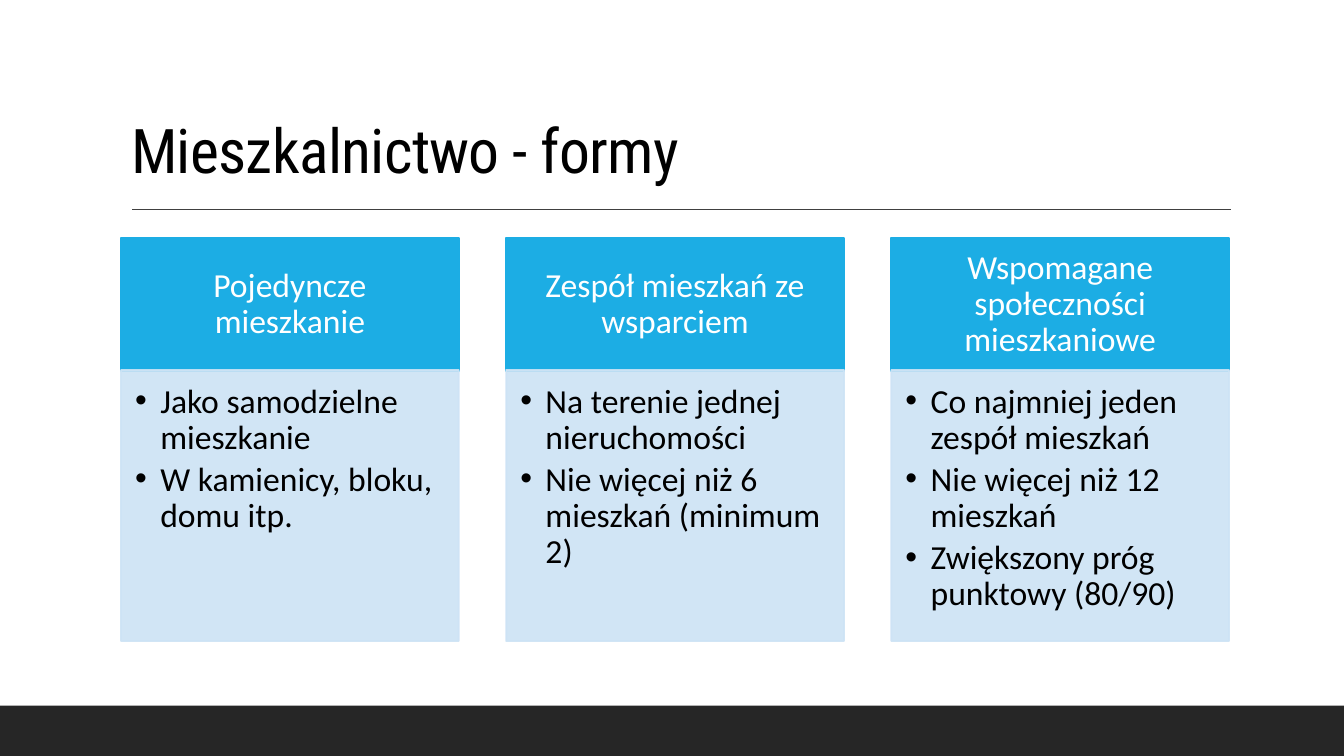
from lxml.etree import SubElement
from pptx import Presentation
from pptx.dml.color import RGBColor
from pptx.enum.shapes import MSO_CONNECTOR, MSO_SHAPE
from pptx.enum.text import MSO_ANCHOR, MSO_AUTO_SIZE, PP_ALIGN
from pptx.oxml.ns import qn
from pptx.util import Inches, Pt

TITLE = "Mieszkalnictwo - formy"
FORMS = [
    ("Pojedyncze mieszkanie",
     ["Jako samodzielne mieszkanie", "W kamienicy, bloku, domu itp."]),
    ("Zespół mieszkań ze wsparciem",
     ["Na terenie jednej nieruchomości",
      "Nie więcej niż 6 mieszkań (minimum 2)"]),
    ("Wspomagane społeczności mieszkaniowe",
     ["Co najmniej jeden zespół mieszkań", "Nie więcej niż 12 mieszkań",
      "Zwiększony próg punktowy (80/90)"]),
]

BLACK = RGBColor(0x00, 0x00, 0x00)
WHITE = RGBColor(0xFF, 0xFF, 0xFF)
FOOTER = RGBColor(0x26, 0x26, 0x26)
RULE = RGBColor(0x40, 0x40, 0x40)
BLUE = RGBColor(0x1C, 0xAD, 0xE4)
PALE = RGBColor(0xCD, 0xE3, 0xF5)

WIDTH, HEIGHT = 13.33, 7.5
LEFT, COL_W, COL_STEP = 1.2, 3.35, 3.82
HEAD_TOP, HEAD_H = 2.36, 1.32
BODY_TOP, BODY_H = 3.67, 2.69
FOOTER_H = 0.5


def add_box(s, x, y, w, h, color, line_width=1.25):
    sp = s.shapes.add_shape(MSO_SHAPE.RECTANGLE, Inches(x), Inches(y), Inches(w), Inches(h))
    sp.shadow.inherit = False
    sp.fill.solid()
    sp.fill.fore_color.rgb = color
    if line_width:
        sp.line.color.rgb = color
        sp.line.width = Pt(line_width)
    else:
        sp.line.fill.background()
    return sp


def set_opacity(sp, percent):
    for clr in sp._element.spPr.iter(qn("a:srgbClr")):
        SubElement(clr, qn("a:alpha"), val=str(percent * 1000))


def set_frame(tf, anchor, insets):
    tf.word_wrap = True
    tf.vertical_anchor = anchor
    tf.margin_left, tf.margin_top, tf.margin_right, tf.margin_bottom = map(Inches, insets)


def write(p, text, color, align, size=24, font="Calibri"):
    p.alignment = align
    p.line_spacing = 0.9
    r = p.add_run()
    r.text = text
    r.font.size = Pt(size)
    r.font.name = font
    r.font.color.rgb = color
    return r


def add_bullet(p):
    pPr = p._p.get_or_add_pPr()
    pPr.set("marL", str(Inches(0.25)))
    pPr.set("indent", str(Inches(-0.25)))
    SubElement(pPr, qn("a:buFont"), typeface="Arial")
    SubElement(pPr, qn("a:buChar"), char="•")


def add_form(s, x, heading, points):
    head = add_box(s, x, HEAD_TOP, COL_W, HEAD_H, BLUE)
    set_frame(head.text_frame, MSO_ANCHOR.MIDDLE, (0.19, 0.11, 0.19, 0.11))
    write(head.text_frame.paragraphs[0], heading, WHITE, PP_ALIGN.CENTER)

    body = add_box(s, x, BODY_TOP, COL_W, BODY_H, PALE)
    set_opacity(body, 90)
    tf = body.text_frame
    set_frame(tf, MSO_ANCHOR.TOP, (0.14, 0.14, 0.19, 0.21))
    for i, point in enumerate(points):
        p = tf.add_paragraph() if i else tf.paragraphs[0]
        write(p, point, BLACK, PP_ALIGN.LEFT)
        p.space_after = Pt(4)
        add_bullet(p)


def main():
    prs = Presentation()
    prs.slide_width, prs.slide_height = Inches(WIDTH), Inches(HEIGHT)
    s = prs.slides.add_slide(prs.slide_layouts[5])

    add_box(s, 0, HEIGHT - FOOTER_H, WIDTH, FOOTER_H, FOOTER, line_width=0)
    rule = s.shapes.add_connector(MSO_CONNECTOR.STRAIGHT, Inches(1.31), Inches(2.08),
                                  Inches(12.21), Inches(2.08))
    rule.line.color.rgb = RULE
    rule.line.width = Pt(1)
    SubElement(rule._element.spPr, qn("a:effectLst"))

    title = s.shapes.title
    title.left, title.top = Inches(LEFT), Inches(0.31)
    title.width, title.height = Inches(11), Inches(1.59)
    tf = title.text_frame
    tf.auto_size = MSO_AUTO_SIZE.NONE
    set_frame(tf, MSO_ANCHOR.BOTTOM, (0.1, 0.05, 0.1, 0.05))
    r = write(tf.paragraphs[0], TITLE, BLACK, PP_ALIGN.LEFT, 44, "Roboto Condensed")
    r._r.get_or_add_rPr().set("spc", "-50")

    for i, (heading, points) in enumerate(FORMS):
        add_form(s, LEFT + i * COL_STEP, heading, points)
    prs.save("out.pptx")


if __name__ == "__main__":
    main()
